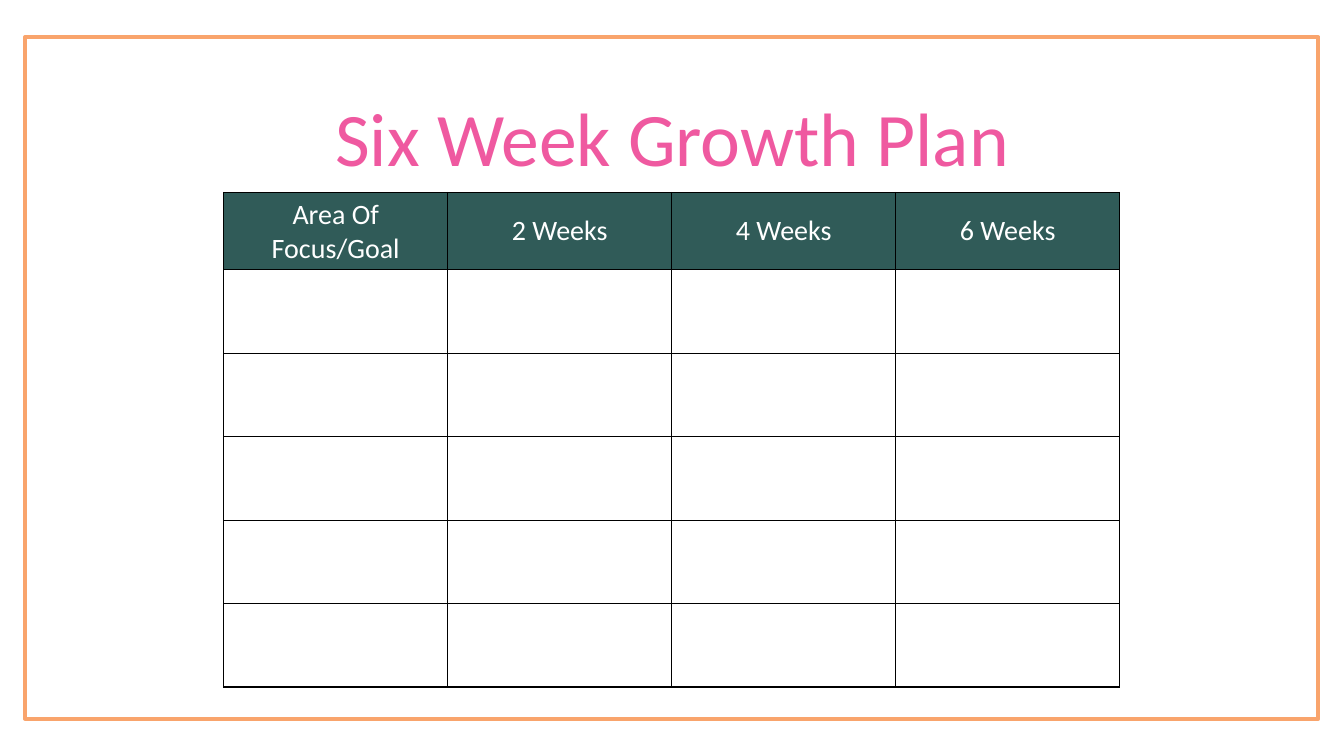
from lxml.etree import SubElement
from pptx import Presentation
from pptx.dml.color import RGBColor
from pptx.enum.shapes import MSO_SHAPE as Shape
from pptx.enum.text import MSO_ANCHOR as Anchor, PP_ALIGN as Align
from pptx.oxml.ns import qn
from pptx.util import Pt

# Content
TITLE = "Six Week Growth Plan"
HEADINGS = ["Area Of Focus/Goal", "2 Weeks", "4 Weeks", "6 Weeks"]
GOAL_ROWS = 5

# Style
FONT = "Calibri"
ORANGE = RGBColor(0xF9, 0xA4, 0x6C)
PINK = RGBColor(0xEF, 0x59, 0xA0)
TEAL = RGBColor(0x30, 0x5B, 0x58)
WHITE = RGBColor(0xFF, 0xFF, 0xFF)
BLACK = RGBColor(0, 0, 0)

# Layout in points
SLIDE_W, SLIDE_H = 960, 540
FRAME = (18, 26.64, 923.76, 486.72)
TITLE_BOX = (141.84, 61.2, 676.8, 72.72)
PLAN_LEFT, PLAN_TOP = 159.84, 137.5
COLUMN_W, HEADING_H, GOAL_H = 160, 49, 59.6


def write(text_frame, text, size, color):
    paragraph = text_frame.paragraphs[0]
    paragraph.alignment = Align.CENTER
    run = paragraph.add_run()
    run.text = text
    run.font.name, run.font.size = FONT, Pt(size)
    run.font.color.rgb = color


def add_borders(cell):
    properties = cell._tc.get_or_add_tcPr()
    for position, side in enumerate(("a:lnL", "a:lnR", "a:lnT", "a:lnB")):
        border = SubElement(properties, qn(side), w=str(Pt(1)))
        fill = SubElement(border, qn("a:solidFill"))
        SubElement(fill, qn("a:srgbClr"), val=str(BLACK))
        properties.insert(position, border)


deck = Presentation()
deck.slide_width, deck.slide_height = Pt(SLIDE_W), Pt(SLIDE_H)
slide = deck.slides.add_slide(deck.slide_layouts[6])

# Frame
frame = slide.shapes.add_shape(Shape.RECTANGLE, *map(Pt, FRAME))
frame.shadow.inherit = False
frame.fill.background()
frame.line.color.rgb = ORANGE
frame.line.width = Pt(3)

# Title
title = slide.shapes.add_textbox(*map(Pt, TITLE_BOX)).text_frame
title.word_wrap = True
write(title, TITLE, 54, PINK)

# Growth plan table
plan = slide.shapes.add_table(
    GOAL_ROWS + 1, len(HEADINGS), Pt(PLAN_LEFT), Pt(PLAN_TOP),
    Pt(COLUMN_W * len(HEADINGS)), Pt(HEADING_H + GOAL_H * GOAL_ROWS)).table
plan.first_row = plan.horz_banding = False
for column in plan.columns:
    column.width = Pt(COLUMN_W)
for index, row in enumerate(plan.rows):
    row.height = Pt(GOAL_H if index else HEADING_H)
    for cell, heading in zip(row.cells, HEADINGS):
        if index:
            cell.fill.background()
        else:
            cell.fill.solid()
            cell.fill.fore_color.rgb = TEAL
            cell.vertical_anchor = Anchor.MIDDLE
            write(cell.text_frame, heading, 20, WHITE)
        add_borders(cell)

deck.save("out.pptx")
